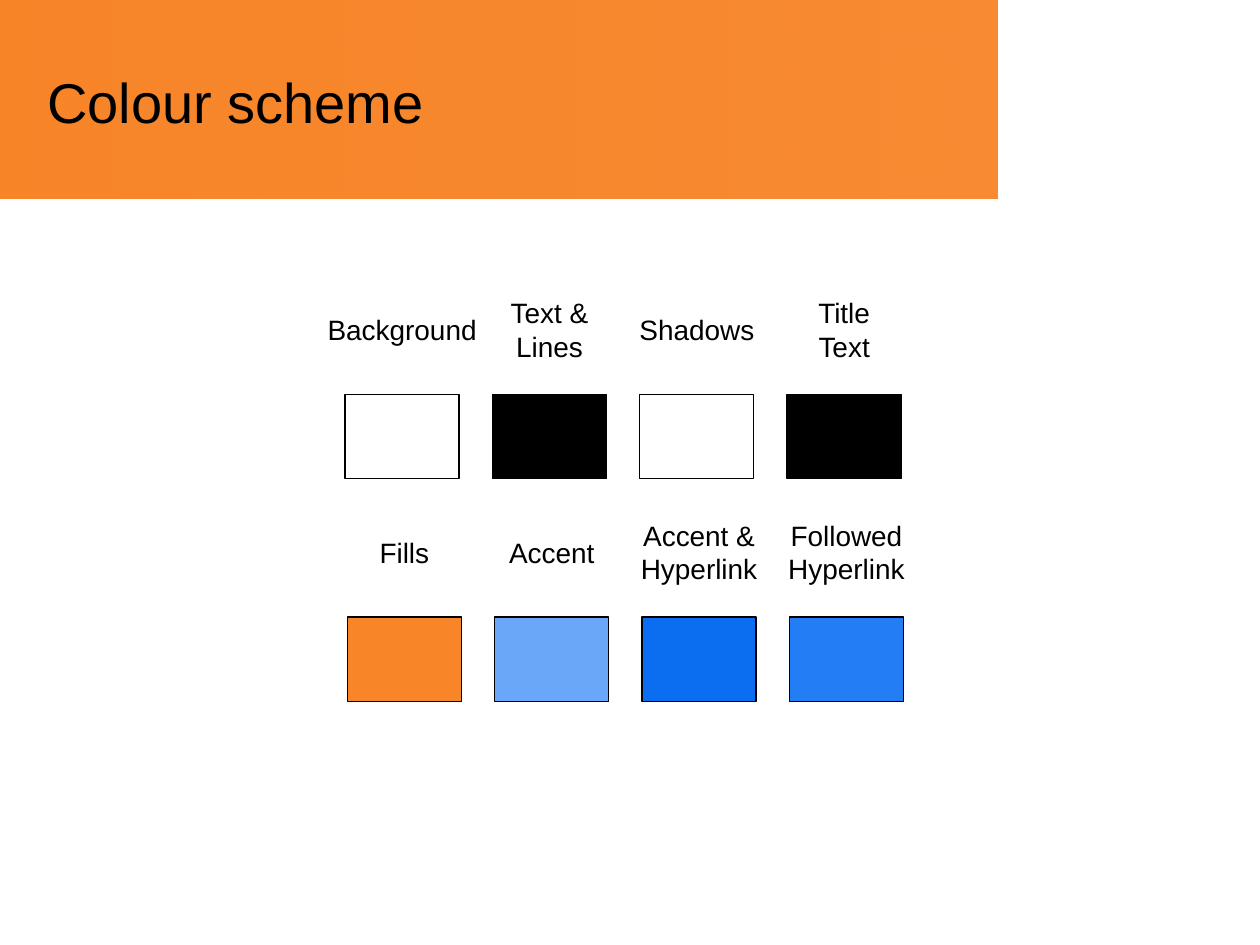
from lxml.etree import SubElement as SubEl
from pptx import Presentation
from pptx.dml.color import RGBColor as RGB
from pptx.enum.shapes import MSO_SHAPE as SHAPE
from pptx.enum.text import MSO_ANCHOR as ANCHOR, MSO_AUTO_SIZE as AUTO, PP_ALIGN as ALIGN
from pptx.oxml.ns import qn
from pptx.util import Pt

BLACK = RGB(0x00, 0x00, 0x00)
WHITE = RGB(0xFF, 0xFF, 0xFF)
ORANGE = RGB(0xF8, 0x85, 0x28)
SKY = RGB(0x6B, 0xA7, 0xF8)
BLUE = RGB(0x0B, 0x6D, 0xEF)
AZURE = RGB(0x23, 0x7D, 0xF5)

# Content: label, label width, swatch colour; \v is a line break
TITLE = "Colour scheme"
ROWS = [
    [("Background", 101, WHITE), ("Text &\nLines", 62, BLACK),
     ("Shadows", 82, WHITE), ("Title\vText", 47, BLACK)],
    [("Fills", 45, ORANGE), ("Accent", 65, SKY),
     ("Accent &\nHyperlink", 83, BLUE), ("Followed\nHyperlink", 83, AZURE)],
]

# Grid
LEFTS = (197.2, 198.5)
TOP, STEP_X, STEP_Y = 225.4, 84.2, 127.2
WIDE, HIGH = 65.2, 48.2
RISE = 37  # from label centre to swatch top
LINE = {1: 26.6, 2: 46.1}  # label height by line count


def add_text(slide, text, box, size, align, form):
    frame = slide.shapes.add_textbox(*map(Pt, box)).text_frame
    frame.text = text
    for key, val in form.items():
        setattr(frame, key, val)
    look = {"name": "Arial", "size": Pt(size)}
    for para in frame.paragraphs:
        para.alignment = align
        for run in para.runs:
            for key, val in look.items():
                setattr(run.font, key, val)
            run.font.color.rgb = BLACK


def add_rect(slide, box):
    rect = slide.shapes.add_shape(SHAPE.RECTANGLE, *map(Pt, box))
    rect.shadow.inherit = False
    return rect


def add_band(slide):
    band = add_rect(slide, (0, 0, 570, 113.4))
    band.line.fill.background()
    band.fill.gradient()
    band.fill.gradient_angle = 0
    for stop in band.fill.gradient_stops:
        stop.color.rgb = ORANGE
    # Fade the right end slightly
    tone = list(band.element.iter(qn("a:srgbClr")))[-1]
    SubEl(tone, qn("a:alpha"), val="95000")


def add_swatch(slide, box, fill):
    rect = add_rect(slide, box)
    rect.fill.solid()
    rect.fill.fore_color.rgb = fill
    rect.line.color.rgb = BLACK
    rect.line.width = Pt(0.75)


def main():
    deck = Presentation()
    deck.slide_width, deck.slide_height = Pt(720), Pt(540)
    slide = deck.slides.add_slide(deck.slide_layouts[6])

    # Title band
    add_band(slide)
    add_text(slide, TITLE, (19.8, 21.6, 538.6, 72.7), 32, ALIGN.LEFT,
             {"word_wrap": True, "vertical_anchor": ANCHOR.MIDDLE})

    # Labelled swatches
    form = {"word_wrap": False, "auto_size": AUTO.SHAPE_TO_FIT_TEXT}
    for r, (left, row) in enumerate(zip(LEFTS, ROWS)):
        top = TOP + r * STEP_Y
        for c, (text, width, fill) in enumerate(row):
            x = left + c * STEP_X
            add_swatch(slide, (x, top, WIDE, HIGH), fill)
            tall = LINE[len(text.splitlines())]
            box = (x + (WIDE - width) / 2, top - RISE - tall / 2, width, tall)
            add_text(slide, text, box, 16, ALIGN.CENTER, form)

    deck.save("out.pptx")


if __name__ == "__main__":
    main()
